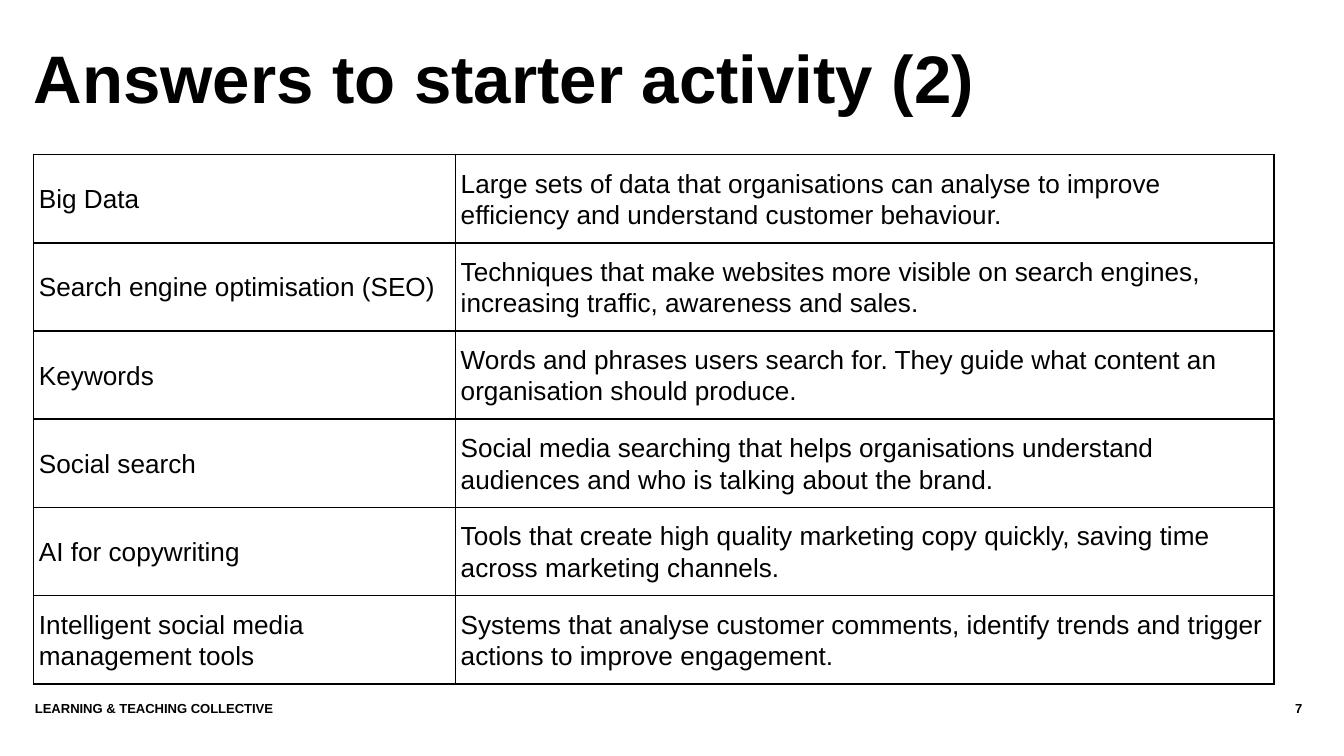
from dataclasses import dataclass

from lxml import etree
from pptx import Presentation
from pptx import util as u
from pptx.dml.color import RGBColor
from pptx.enum import text
from pptx.oxml.ns import qn

COLORS = {"ink": "000000", "paper": "FFFFFF"}
FONT = "Arial"
SLIDE_WIDTH = 10
SLIDE_HEIGHT = SLIDE_WIDTH * 9 / 16
LEFT, CONTENT_WIDTH = 0.25, 9.23
TABLE_TOP, TABLE_HEIGHT = 1.15, 3.94
COLUMN_SHARES = (0.34, 0.66)
FOOTER_TOP, FOOTER_HEIGHT = 5.21, 0.3


@dataclass(frozen=True)
class Answer:
    term: str
    meaning: str


@dataclass(frozen=True)
class FooterItem:
    wording: str
    left: float
    width: float
    alignment: text.PP_ALIGN


ANSWERS = (
    Answer("Big Data",
           "Large sets of data that organisations can analyse to improve "
           "efficiency and understand customer behaviour."),
    Answer("Search engine optimisation (SEO)",
           "Techniques that make websites more visible on search engines, "
           "increasing traffic, awareness and sales."),
    Answer("Keywords",
           "Words and phrases users search for. They guide what content an "
           "organisation should produce."),
    Answer("Social search",
           "Social media searching that helps organisations understand "
           "audiences and who is talking about the brand."),
    Answer("AI for copywriting",
           "Tools that create high quality marketing copy quickly, saving time "
           "across marketing channels."),
    Answer("Intelligent social media management tools",
           "Systems that analyse customer comments, identify trends and trigger "
           "actions to improve engagement."),
)

FOOTER = (
    FooterItem("7", 8.7, 0.99, text.PP_ALIGN.RIGHT),
    FooterItem("LEARNING & TEACHING COLLECTIVE", 0.26, 8.41, text.PP_ALIGN.LEFT),
)


def format_runs(paragraph, size: float, bold: bool = False) -> None:
    for run in paragraph.runs:
        run.font.name = FONT
        run.font.size = u.Pt(size)
        run.font.bold = bold
        run.font.color.rgb = RGBColor.from_string(COLORS["ink"])


def clear_insets(frame) -> None:
    frame.margin_left = frame.margin_right = 0
    frame.margin_top = frame.margin_bottom = 0
    frame.word_wrap = True


def draw_title(slide, wording: str) -> None:
    title = slide.shapes.title
    title.left, title.top = u.Inches(LEFT), u.Inches(0.27)
    title.width, title.height = u.Inches(CONTENT_WIDTH), u.Inches(0.76)
    frame = title.text_frame
    frame.text = wording
    clear_insets(frame)
    frame.margin_bottom = u.Inches(0.09)
    frame.auto_size = text.MSO_AUTO_SIZE.NONE
    frame.vertical_anchor = text.MSO_ANCHOR.MIDDLE
    paragraph = frame.paragraphs[0]
    paragraph.alignment = text.PP_ALIGN.LEFT
    paragraph.line_spacing = 0.9
    format_runs(paragraph, 36, bold=True)


def draw_footer_item(slide, item: FooterItem) -> None:
    box = slide.shapes.add_textbox(u.Inches(item.left), u.Inches(FOOTER_TOP),
                                   u.Inches(item.width), u.Inches(FOOTER_HEIGHT))
    frame = box.text_frame
    frame.text = item.wording
    clear_insets(frame)
    paragraph = frame.paragraphs[0]
    paragraph.alignment = item.alignment
    format_runs(paragraph, 7, bold=True)


def add_borders(cell) -> None:
    properties = cell._tc.get_or_add_tcPr()
    for position, side in enumerate(("a:lnL", "a:lnR", "a:lnT", "a:lnB")):
        line = etree.Element(qn(side), w=str(u.Pt(1)))
        fill = etree.SubElement(line, qn("a:solidFill"))
        etree.SubElement(fill, qn("a:srgbClr"), val=COLORS["ink"])
        properties.insert(position, line)


def fill_cell(cell, wording: str) -> None:
    cell.text_frame.text = wording
    cell.margin_left = cell.margin_right = u.Inches(0.04)
    cell.margin_top = cell.margin_bottom = 0
    cell.vertical_anchor = text.MSO_ANCHOR.MIDDLE
    cell.fill.solid()
    cell.fill.fore_color.rgb = RGBColor.from_string(COLORS["paper"])
    add_borders(cell)
    paragraph = cell.text_frame.paragraphs[0]
    paragraph.line_spacing = 1.07
    paragraph.space_after = u.Pt(8)
    format_runs(paragraph, 14)


def draw_answers(slide, answers: tuple[Answer, ...]) -> None:
    table = slide.shapes.add_table(
        len(answers), len(COLUMN_SHARES), u.Inches(LEFT), u.Inches(TABLE_TOP),
        u.Inches(CONTENT_WIDTH), u.Inches(TABLE_HEIGHT)).table
    table.first_row = table.horz_banding = False
    for column, share in zip(table.columns, COLUMN_SHARES):
        column.width = u.Inches(CONTENT_WIDTH * share)
    for row, answer in zip(table.rows, answers):
        for cell, wording in zip(row.cells, (answer.term, answer.meaning)):
            fill_cell(cell, wording)


def main() -> None:
    presentation = Presentation()
    presentation.slide_width = u.Inches(SLIDE_WIDTH)
    presentation.slide_height = u.Inches(SLIDE_HEIGHT)
    slide = presentation.slides.add_slide(
        presentation.slide_layouts.get_by_name("Title Only"))
    draw_title(slide, "Answers to starter activity (2)")
    for item in FOOTER:
        draw_footer_item(slide, item)
    draw_answers(slide, ANSWERS)
    presentation.save("out.pptx")


if __name__ == "__main__":
    main()
